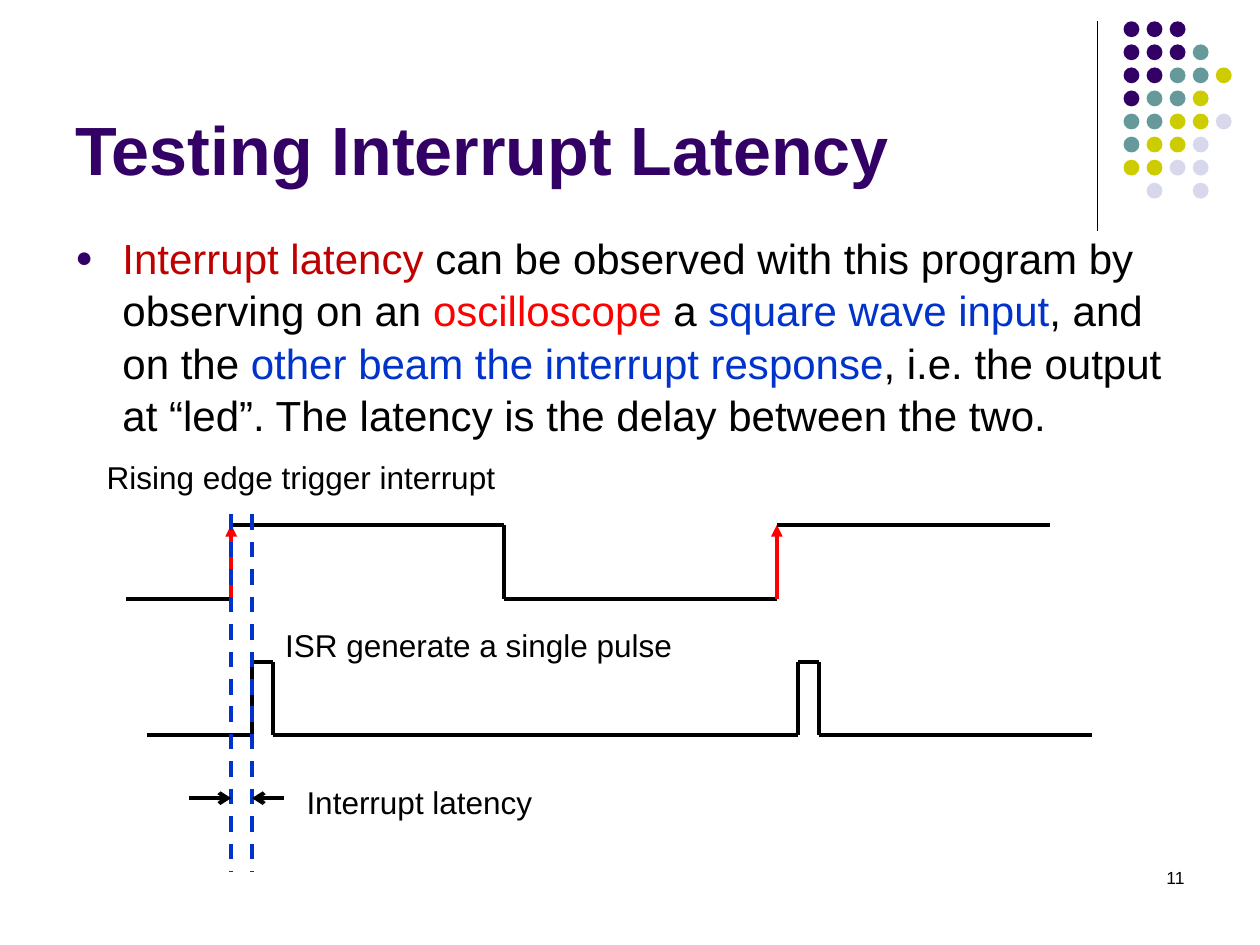
"""Build the slide on testing interrupt latency."""
from dataclasses import dataclass, field
from itertools import pairwise

from lxml import etree
from pptx import Presentation
from pptx.dml.color import RGBColor
from pptx.enum.dml import MSO_LINE
from pptx.enum.shapes import MSO_CONNECTOR, MSO_SHAPE
from pptx.enum.text import MSO_ANCHOR, PP_ALIGN
from pptx.oxml.ns import qn
from pptx.slide import Slide
from pptx.util import Cm, Pt

STRAIGHT = MSO_CONNECTOR.STRAIGHT
ELLIPSE = MSO_SHAPE.OVAL
DASH = MSO_LINE.DASH
BOTTOM = MSO_ANCHOR.BOTTOM
RIGHT = PP_ALIGN.RIGHT

BLACK, PURPLE, TEAL = "000000", "330066", "669999"
OLIVE, LILAC = "CCCC00", "D8D8EC"
RED, DARK_RED, BLUE = "FF0000", "C00000", "0033CC"

DOT_COLOURS = {"P": PURPLE, "T": TEAL, "O": OLIVE, "L": LILAC}
DOT_ROWS = ("PPP", "PPPT", "PPTTO", "PTTO", "TTOOL", "TOOL", "OOLL", " L L")
DOT_LEFT, DOT_TOP, DOT_STEP, DOT_SIZE = 22.65, 0.43, 0.465, 0.32

INPUT_HIGH, INPUT_LOW = 10.58, 12.07
PULSE_HIGH, PULSE_LOW = 13.34, 14.82
FIRST_EDGE, FALLING_EDGE, SECOND_EDGE = 4.66, 10.16, 15.66
FIRST_PULSE, SECOND_PULSE, PULSE_WIDTH = 5.08, 16.09, 0.42
MARKER_TOP, MARKER_BOTTOM, ARROW_LEVEL = 10.37, 17.57, 16.09

Point = tuple[float, float]


@dataclass(frozen=True)
class Span:
    """A stretch of text in one colour."""
    text: str
    colour: str = BLACK


@dataclass(frozen=True)
class TextBox:
    """A text box with its place in centimetres and its formats."""
    place: tuple[float, float, float, float]
    size: float
    spans: tuple[Span, ...]
    bullet: str = ""
    frame: dict = field(default_factory=lambda: {"word_wrap": True})
    para: dict = field(default_factory=dict)
    font: dict = field(default_factory=dict)


@dataclass(frozen=True)
class Stroke:
    """A chain of straight lines through points in centimetres."""
    points: tuple[Point, ...]
    colour: str = BLACK
    width: float = 2.25
    head: str = ""
    dashed: bool = False


def label(left: float, top: float, width: float, text: str) -> TextBox:
    """Describe a one-line label of the timing diagram."""
    return TextBox((left, top, width, 1.02), 18, (Span(text),), frame={"word_wrap": False})


TEXTS = (
    TextBox((1.27, 0.33, 20.96, 3.61), 39, (Span("Testing Interrupt Latency", PURPLE),),
            frame={"word_wrap": True, "vertical_anchor": BOTTOM}, font={"bold": True}),
    TextBox((1.27, 4.52, 22.86, 4.57), 24, (
        Span("Interrupt latency ", DARK_RED),
        Span("can be observed with this program by observing on an "),
        Span("oscilloscope", RED),
        Span(" a "),
        Span("square wave input", BLUE),
        Span(", and on the "),
        Span("other beam the interrupt response", BLUE),
        Span(", i.e. the output at “led”. The latency is the delay between the two."),
    ), bullet="●", para={"space_before": Pt(4.8), "line_spacing": 1.04}),
    TextBox((18.21, 17.35, 5.92, 1.27), 10, (Span("11"),), para={"alignment": RIGHT}),
    label(1.9, 9.1, 8.43, "Rising edge trigger interrupt"),
    label(5.5, 12.5, 8.38, "ISR generate a single pulse"),
    label(5.93, 15.67, 5.1, "Interrupt latency"),
)


def pulse(start: float) -> tuple[Point, ...]:
    """Return the four corners of a response pulse."""
    end = start + PULSE_WIDTH
    return ((start, PULSE_LOW), (start, PULSE_HIGH), (end, PULSE_HIGH), (end, PULSE_LOW))


def rising_edge(across: float) -> Stroke:
    """Describe the arrow of a triggering edge."""
    return Stroke(((across, INPUT_LOW), (across, INPUT_HIGH)), RED, head="triangle")


def marker(across: float) -> Stroke:
    """Describe a dashed upright that marks one end of the latency."""
    return Stroke(((across, MARKER_TOP), (across, MARKER_BOTTOM)), BLUE, dashed=True)


def latency_arrow(start: float, end: float) -> Stroke:
    """Describe an arrow that points at a marker."""
    return Stroke(((start, ARROW_LEVEL), (end, ARROW_LEVEL)), head="arrow")


STROKES = (
    Stroke(((22.12, 0.43), (22.12, 4.65)), width=0.75),
    Stroke(((2.54, INPUT_LOW), (FIRST_EDGE, INPUT_LOW))),
    rising_edge(FIRST_EDGE),
    Stroke(((FIRST_EDGE, INPUT_HIGH), (FALLING_EDGE, INPUT_HIGH),
            (FALLING_EDGE, INPUT_LOW), (SECOND_EDGE, INPUT_LOW))),
    rising_edge(SECOND_EDGE),
    Stroke(((SECOND_EDGE, INPUT_HIGH), (21.17, INPUT_HIGH))),
    Stroke(((2.96, PULSE_LOW), *pulse(FIRST_PULSE), *pulse(SECOND_PULSE), (22.01, PULSE_LOW))),
    marker(FIRST_PULSE),
    marker(FIRST_EDGE),
    latency_arrow(3.81, FIRST_EDGE),
    latency_arrow(5.72, FIRST_PULSE),
)


def rgb(colour: str) -> RGBColor:
    """Turn a hex string into a colour."""
    return RGBColor.from_string(colour)


def apply(target: object, formats: dict) -> None:
    """Set each format value on the target."""
    for name, value in formats.items():
        setattr(target, name, value)


def draw_stroke(page: Slide, stroke: Stroke) -> None:
    """Draw one connector between each pair of points."""
    for start, end in pairwise(stroke.points):
        line = page.shapes.add_connector(STRAIGHT, *map(Cm, start + end))
        line.line.color.rgb = rgb(stroke.colour)
        line.line.width = Pt(stroke.width)
        if stroke.dashed:
            line.line.dash_style = DASH
        if stroke.head:
            etree.SubElement(line.line._get_or_add_ln(), qn("a:tailEnd"), type=stroke.head)
        etree.SubElement(line._element.spPr, qn("a:effectLst"))


def draw_dots(page: Slide) -> None:
    """Draw the corner grid of coloured dots."""
    for row, codes in enumerate(DOT_ROWS):
        for column, code in enumerate(codes):
            if code not in DOT_COLOURS:
                continue
            left, top = DOT_LEFT + column * DOT_STEP, DOT_TOP + row * DOT_STEP
            dot = page.shapes.add_shape(ELLIPSE, *map(Cm, (left, top, DOT_SIZE, DOT_SIZE)))
            dot.shadow.inherit = False
            dot.fill.solid()
            dot.fill.fore_color.rgb = rgb(DOT_COLOURS[code])
            dot.line.fill.background()


def add_bullet(para: object, bullet: str) -> None:
    """Give a paragraph a hanging purple bullet."""
    properties = para._p.get_or_add_pPr()
    properties.set("marL", str(Cm(0.95)))
    properties.set("indent", str(Cm(-0.95)))
    colour = etree.SubElement(properties, qn("a:buClr"))
    etree.SubElement(colour, qn("a:srgbClr"), val=PURPLE)
    etree.SubElement(properties, qn("a:buSzPct"), val="70000")
    etree.SubElement(properties, qn("a:buFont"), typeface="Arial")
    etree.SubElement(properties, qn("a:buChar"), char=bullet)


def draw_text(page: Slide, text: TextBox) -> None:
    """Draw a text box with one paragraph."""
    box = page.shapes.add_textbox(*map(Cm, text.place))
    apply(box.text_frame, text.frame)
    para = box.text_frame.paragraphs[0]
    apply(para, text.para)
    if text.bullet:
        add_bullet(para, text.bullet)
    for span in text.spans:
        run = para.add_run()
        run.text = span.text
        apply(run.font, {"name": "Arial", "size": Pt(text.size), **text.font})
        run.font.color.rgb = rgb(span.colour)


def main() -> None:
    """Build and save the deck."""
    deck = Presentation()
    apply(deck, {"slide_width": Cm(25.4), "slide_height": Cm(19.05)})
    page = deck.slides.add_slide(deck.slide_layouts[6])
    draw_dots(page)
    for stroke in STROKES:
        draw_stroke(page, stroke)
    for text in TEXTS:
        draw_text(page, text)
    deck.save("out.pptx")


if __name__ == "__main__":
    main()
